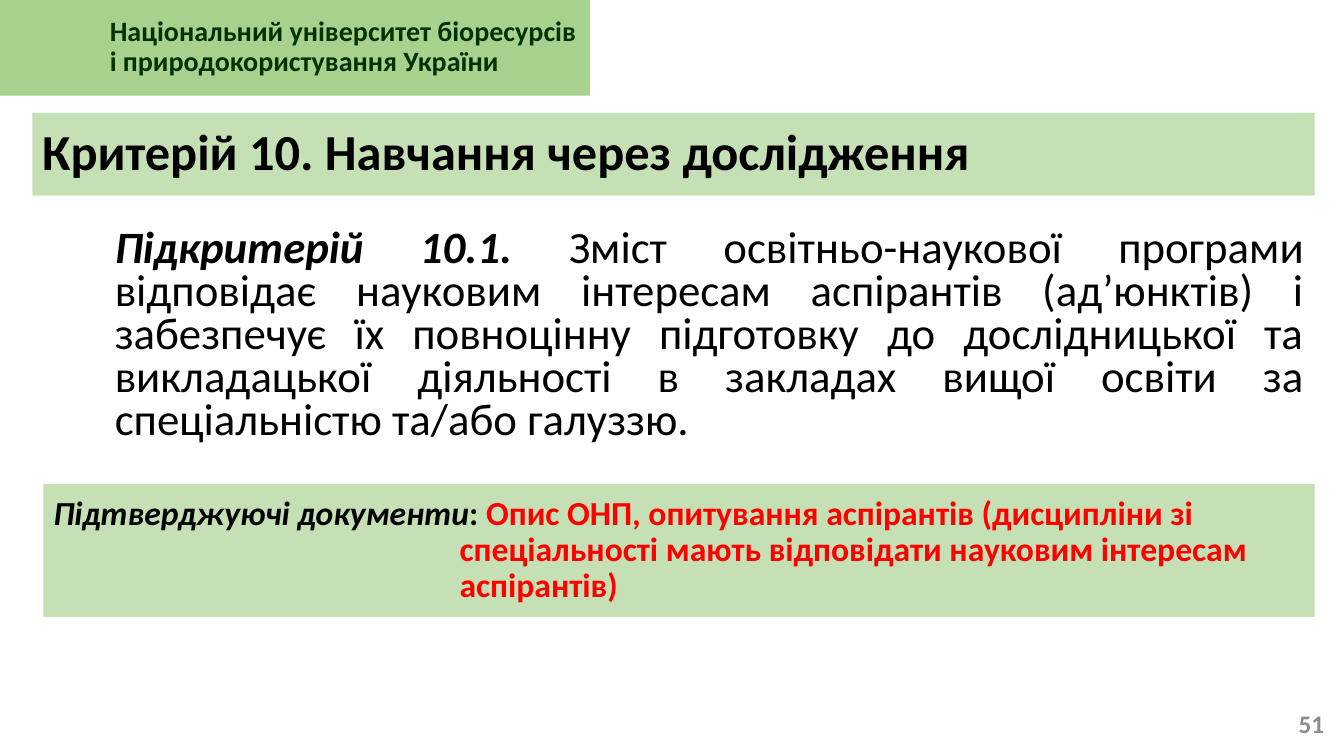
from pptx import Presentation as Deck
from pptx.dml.color import RGBColor as Color
from pptx.enum.shapes import MSO_SHAPE as Kind
from pptx.enum.text import MSO_ANCHOR as Anchor, PP_ALIGN as Align
from pptx.util import Inches, Pt

HUES = {"band": "A9D18E", "panel": "C5E0B4", "dark": "003300",
        "black": "000000", "red": "FF0000", "gray": "8C8C8C"}


class Page:
    font = "Calibri"

    def __init__(self, deck):
        self.slide = deck.slides.add_slide(deck.slide_layouts[6])

    def panel(self, box, fill, runs, size, **style):
        shape = self.slide.shapes.add_shape(Kind.RECTANGLE, *map(Inches, box))
        shape.shadow.inherit = False
        shape.fill.solid()
        shape.fill.fore_color.rgb = Color.from_string(HUES[fill])
        shape.line.fill.background()
        self.fill_text(shape, runs, size, **style)

    def label(self, box, runs, size, **style):
        shape = self.slide.shapes.add_textbox(*map(Inches, box))
        self.fill_text(shape, runs, size, **style)

    def fill_text(self, shape, runs, size, align=Align.LEFT, space=0.9,
                  left=0, first=0):
        frame = shape.text_frame
        frame.word_wrap = True
        frame.vertical_anchor = Anchor.MIDDLE
        para = frame.paragraphs[0]
        para.alignment = align
        para.line_spacing = space
        props = para._p.get_or_add_pPr()
        props.set("marL", str(Inches(left)))
        props.set("indent", str(Inches(first)))
        for text, hue, bold, slant in runs:
            run = para.add_run()
            run.text = text
            font = run.font
            font.name = self.font
            font.size = Pt(size)
            font.bold = bold
            font.italic = slant
            font.color.rgb = Color.from_string(HUES[hue])


def main():
    deck = Deck()
    deck.slide_width = Inches(13.33)
    deck.slide_height = Inches(7.5)
    page = Page(deck)
    page.panel((0, -0.01, 5.85, 0.96), "band", [
        ("Національний університет біоресурсів і природокористування України",
         "dark", True, False)], 20, left=0.99)
    page.panel((0.32, 1.12, 12.72, 0.82), "panel", [
        ("Критерій 10. Навчання через дослідження", "black", True, False)], 36)
    page.label((12.74, 6.98, 0.49, 0.4), [("51", "gray", True, False)], 18,
               align=Align.RIGHT, space=1.0)
    page.label((1.04, 2.13, 12, 2.41), [
        ("Підкритерій 10.1. ", "black", True, True),
        ("Зміст освітньо-наукової програми відповідає науковим інтересам "
         "аспірантів (ад’юнктів) і забезпечує їх повноцінну підготовку до "
         "дослідницької та викладацької діяльності в закладах вищої освіти "
         "за спеціальністю та/або галуззю.", "black", False, False)], 32,
        align=Align.JUSTIFY, space=0.8)
    page.panel((0.43, 4.8, 12.61, 1.32), "panel", [
        ("Підтверджуючі документи", "black", True, True),
        (": ", "black", True, False),
        ("Опис ОНП, опитування аспірантів (дисципліни зі спеціальності "
         "мають відповідати науковим інтересам аспірантів)",
         "red", True, False)], 24, left=4.03, first=-4.03)
    deck.save("out.pptx")


if __name__ == "__main__":
    main()
